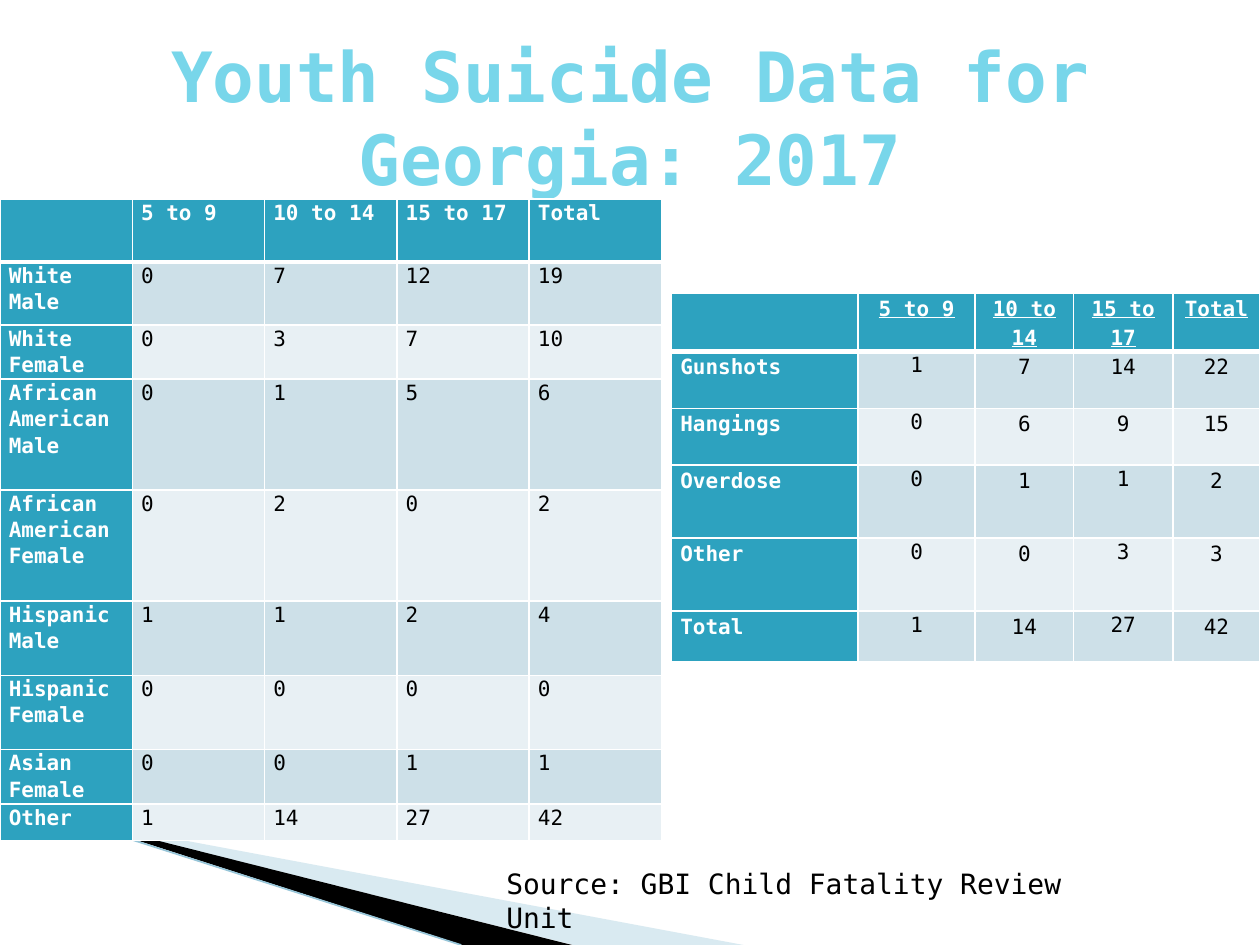
from lxml import etree
from pptx import Presentation
from pptx.dml.color import RGBColor
from pptx.enum.shapes import MSO_CONNECTOR
from pptx.enum.text import MSO_ANCHOR, MSO_AUTO_SIZE, PP_ALIGN
from pptx.oxml.ns import qn
from pptx.util import Inches, Pt

LEFT, CENTER = PP_ALIGN.LEFT, PP_ALIGN.CENTER
MIDDLE = MSO_ANCHOR.MIDDLE
NO_AUTOFIT = MSO_AUTO_SIZE.NONE
STRAIGHT = MSO_CONNECTOR.STRAIGHT
FONT = "DejaVu Sans Mono"
TEAL, WHITE, BLACK = "2DA2BF", "FFFFFF", "000000"
BANDS = ("CDE0E8", "E8F0F4")
WIDTH, HEIGHT = 10, 7.5

AGES = ["", "5 to 9", "10 to 14", "15 to 17", "Total"]
GROUPS = [
    AGES,
    ["White Male", "0", "7", "12", "19"],
    ["White Female", "0", "3", "7", "10"],
    ["African American Male", "0", "1", "5", "6"],
    ["African American Female", "0", "2", "0", "2"],
    ["Hispanic Male", "1", "1", "2", "4"],
    ["Hispanic Female", "0", "0", "0", "0"],
    ["Asian Female", "0", "0", "1", "1"],
    ["Other", "1", "14", "27", "42"],
]
METHODS = [
    AGES,
    ["Gunshots", "1", "7", "14", "22"],
    ["Hangings", "0", "6", "9", "15"],
    ["Overdose", "0", "1", "1", "2"],
    ["Other", "0", "0", "3", "3"],
    ["Total", "1", "14", "27", "42"],
]


def color(value):
    """Turn a hex string into a colour."""
    return RGBColor.from_string(value)


def write(frame, text, size=12, ink=BLACK, bold=False, underline=False,
          align=LEFT, spacing=None, after=None):
    """Put one formatted paragraph into a text frame."""
    para = frame.paragraphs[0]
    para.alignment = align
    para.line_spacing = spacing
    para.space_after = after
    span = para.add_run()
    span.text = text
    span.font.name, span.font.size = FONT, Pt(size)
    span.font.bold, span.font.underline = bold, underline
    span.font.color.rgb = color(ink)


def add_wedge(page, points, fill, opacity=100):
    """Draw a filled outline through points given in inches."""
    corners = [(Inches(x), Inches(y)) for x, y in points]
    builder = page.shapes.build_freeform(*corners[0])
    builder.add_line_segments(corners[1:])
    wedge = builder.convert_to_shape()
    wedge.shadow.inherit = False
    wedge.line.fill.background()
    wedge.fill.solid()
    wedge.fill.fore_color.rgb = color(fill)
    if opacity < 100:
        tone = wedge.fill._xPr.find(".//" + qn("a:srgbClr"))
        etree.SubElement(tone, qn("a:alpha"), val=str(opacity * 1000))


def add_line(page, start, end, ink, width):
    """Draw a straight line between two points given in inches."""
    ends = [Inches(value) for value in (*start, *end)]
    line = page.shapes.add_connector(STRAIGHT, *ends)
    line.line.color.rgb = color(ink)
    line.line.width = Pt(width)
    etree.SubElement(line._element.spPr, qn("a:effectLst"))


def add_borders(cell, top, bottom):
    """Give a cell white borders; top and bottom widths are in points."""
    properties = cell._tc.get_or_add_tcPr()
    for side, width in (("L", 1), ("R", 1), ("T", top), ("B", bottom)):
        edge = etree.SubElement(properties, qn("a:ln" + side), w=str(Pt(width)))
        fill = etree.SubElement(edge, qn("a:solidFill"))
        etree.SubElement(fill, qn("a:srgbClr"), val=WHITE)


def add_data_table(page, data, left, top, widths, heights, text_format):
    """Add a banded table; text_format gives the format for a row and column."""
    box = page.shapes.add_table(len(heights), len(widths), Inches(left), Inches(top),
                                Inches(sum(widths)), Inches(sum(heights)))
    table = box.table
    for column, width in zip(table.columns, widths):
        column.width = Inches(width)
    for row, height in zip(table.rows, heights):
        row.height = Inches(height)
    for r, values in enumerate(data):
        for c, text in enumerate(values):
            cell = table.cell(r, c)
            heading = r == 0 or c == 0
            add_borders(cell, 3 if r == 1 else 1, 3 if r == 0 else 1)
            cell.fill.solid()
            cell.fill.fore_color.rgb = color(TEAL if heading else BANDS[(r - 1) % 2])
            cell.margin_left = cell.margin_right = Inches(0.07)
            cell.margin_top = cell.margin_bottom = 0
            if text:
                write(cell.text_frame, text, ink=WHITE if heading else BLACK,
                      bold=heading, **text_format(r, c))


def group_format(row, column):
    """Format every cell of the group table alike."""
    return {"spacing": 1.07}


def method_format(row, column):
    """Centre the numbers and underline the header of the method table."""
    tight = row > 0 and (column == 1 or (column == 3 and row > 2))
    return {
        "align": CENTER if column else LEFT,
        "underline": row == 0,
        "spacing": 1.07 if tight else 1.15,
        "after": None if tight else Pt(10),
    }


def add_title(page, text):
    """Place and format the title placeholder."""
    title = page.shapes.title
    title.left, title.top = Inches(0.05 * WIDTH), Inches(0.04 * HEIGHT)
    title.width, title.height = Inches(0.9 * WIDTH), Inches(1.25)
    title.text_frame.auto_size = NO_AUTOFIT
    title.text_frame.vertical_anchor = MIDDLE
    write(title.text_frame, text, size=39.6, ink="78D6EA", bold=True, align=CENTER)


def add_source(page, text):
    """Add the source note at the foot of the slide."""
    box = page.shapes.add_textbox(Inches(3.92), Inches(6.83), Inches(4.67), Inches(0.67))
    box.text_frame.word_wrap = True
    write(box.text_frame, text, size=16)


def main():
    """Build and save the slide."""
    deck = Presentation()
    deck.slide_width, deck.slide_height = Inches(WIDTH), Inches(HEIGHT)
    page = deck.slides.add_slide(deck.slide_layouts[5])
    add_wedge(page, [(0.55, 6.5), (5.9, HEIGHT), (4.55, HEIGHT)], "A0CBDC", opacity=40)
    add_wedge(page, [(0.53, 6.49), (4.54, HEIGHT), (3.67, HEIGHT)], BLACK)
    add_line(page, (0, 6.33), (3.66, HEIGHT), "97C5D8", 0.95)
    add_title(page, "Youth Suicide Data for Georgia: 2017")
    add_source(page, "Source: GBI Child Fatality Review Unit")
    add_data_table(page, METHODS, 5.33, 2.33, [1.48, 0.93, 0.78, 0.79, 0.69],
                   [0.46, 0.45, 0.45, 0.58, 0.58, 0.4], method_format)
    add_data_table(page, GROUPS, 0, 1.58, [1.05] * 5,
                   [0.5, 0.5, 0.43, 0.88, 0.88, 0.59, 0.59, 0.43, 0.29], group_format)
    deck.save("out.pptx")


if __name__ == "__main__":
    main()
